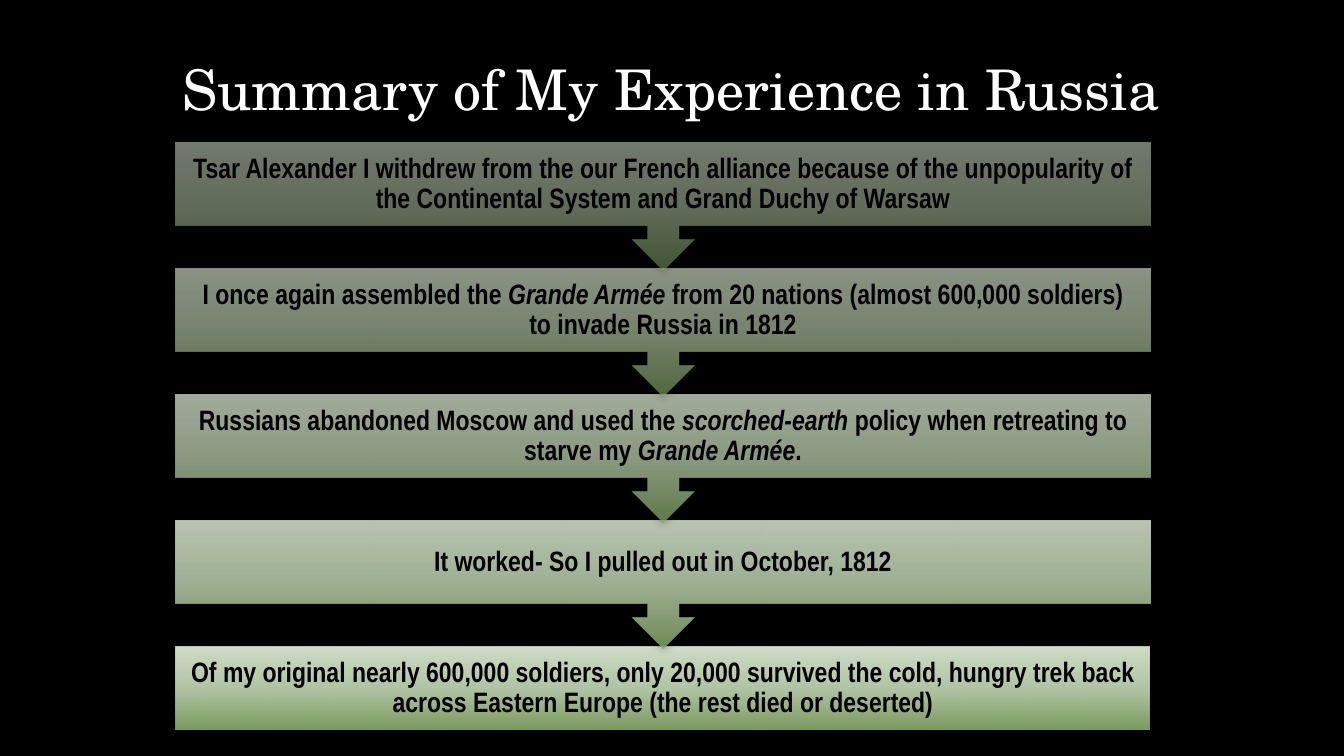
"""Build the slide on the Russian campaign."""
import dataclasses

import lxml.etree
import pptx
import pptx.dml.color
import pptx.enum.shapes
import pptx.enum.text
import pptx.util

RGB = pptx.dml.color.RGBColor.from_string
KIND = pptx.enum.shapes.MSO_SHAPE
TEXT = pptx.enum.text
SPACE = "http://schemas.openxmlformats.org/drawingml/2006/main"


@dataclasses.dataclass(frozen=True)
class Theme:
    """Colours, fonts and sizes."""
    back: str = "000000"
    ink: str = "000000"
    head: str = "FFFFFF"
    shade: str = "000000"
    stops: tuple = ((0, "87AA67"), (48, "C2D7B3"), (100, "E5F3DC"))
    head_font: str = "TeX Gyre Schola"
    step_font: str = "Arial Narrow"
    head_size: int = 40
    step_size: int = 20


THEME = Theme()
TITLE = "Summary of My Experience in Russia"
STEPS = (
    "Tsar Alexander I withdrew from the our French alliance because of the "
    "unpopularity of the Continental System and Grand Duchy of Warsaw",
    "I once again assembled the *Grande Armée* from 20 nations "
    "(almost 600,000 soldiers) to invade Russia in 1812",
    "Russians abandoned Moscow and used the *scorched-earth* policy when "
    "retreating to starve my *Grande Armée*.",
    "It worked- So I pulled out in October, 1812",
    "Of my original nearly 600,000 soldiers, only 20,000 survived the cold, "
    "hungry trek back across Eastern Europe (the rest died or deserted)",
)
LEFT, TOP, WIDTH, PITCH = 176, 143, 974, 126
BOX, CALL, INSET = 83, 127, 15


def px(count):
    """Turn pixels into EMU."""
    return pptx.util.Emu(round(count * 914400 / 100.8))


def style(para, name, size, color, space):
    """Format a centred paragraph."""
    para.alignment = TEXT.PP_ALIGN.CENTER
    para.line_spacing = space
    para.font.name = name
    para.font.size = pptx.util.Pt(size)
    para.font.color.rgb = RGB(color)


def write(para, text):
    """Add runs, with starred parts in italics."""
    for index, part in enumerate(text.split("*")):
        run = para.add_run()
        run.text = part
        if index % 2:
            run.font.italic = True


def paint(shape, alpha):
    """Give a shape a clear gradient and a soft shadow."""
    stops = "".join(
        f'<a:gs pos="{pos * 1000}"><a:srgbClr val="{color}">'
        f'<a:alpha val="{alpha * 1000}"/></a:srgbClr></a:gs>'
        for pos, color in THEME.stops)
    fill = (f'<a:gradFill xmlns:a="{SPACE}"><a:gsLst>{stops}</a:gsLst>'
            '<a:lin ang="16200000" scaled="0"/></a:gradFill>')
    shadow = (f'<a:outerShdw xmlns:a="{SPACE}" blurRad="63500" dist="12700" '
              f'dir="5400000" rotWithShape="0"><a:srgbClr val="{THEME.shade}">'
              '<a:alpha val="32000"/></a:srgbClr></a:outerShdw>')
    shape.line.fill.background()
    shape.shadow.inherit = False
    props = shape._element.spPr
    props.find(f"{{{SPACE}}}prstGeom").addnext(lxml.etree.fromstring(fill))
    effects = props.find(f"{{{SPACE}}}effectLst")
    effects.append(lxml.etree.fromstring(shadow))


def add_title(slide):
    """Place and fill the title."""
    title = slide.shapes.title
    title.left, title.top = px(142), px(0)
    title.width, title.height = px(1058), px(126)
    frame = title.text_frame
    frame.text = TITLE
    frame.auto_size = TEXT.MSO_AUTO_SIZE.NONE
    frame.vertical_anchor = TEXT.MSO_ANCHOR.BOTTOM
    style(frame.paragraphs[0], THEME.head_font, THEME.head_size,
          THEME.head, 0.8)


def add_step(slide, index, text):
    """Add one step, with an arrow unless it is the last."""
    last = index == len(STEPS) - 1
    kind = KIND.RECTANGLE if last else KIND.DOWN_ARROW_CALLOUT
    step = slide.shapes.add_shape(
        kind, px(LEFT), px(TOP + index * PITCH), px(WIDTH),
        px(BOX if last else CALL))
    paint(step, 50 + 10 * index)
    frame = step.text_frame
    frame.word_wrap = True
    frame.vertical_anchor = TEXT.MSO_ANCHOR.MIDDLE
    frame.margin_left = frame.margin_right = px(INSET)
    frame.margin_top = frame.margin_bottom = px(INSET)
    para = frame.paragraphs[0]
    write(para, text)
    style(para, THEME.step_font, THEME.step_size, THEME.ink, 0.9)
    para.font.bold = True


def main():
    """Build and save the deck."""
    deck = pptx.Presentation()
    deck.slide_width, deck.slide_height = px(1344), px(756)
    slide = deck.slides.add_slide(deck.slide_layouts[5])
    slide.background.fill.solid()
    slide.background.fill.fore_color.rgb = RGB(THEME.back)
    add_title(slide)
    for index, text in reversed(list(enumerate(STEPS))):
        add_step(slide, index, text)
    deck.save("out.pptx")


if __name__ == "__main__":
    main()
